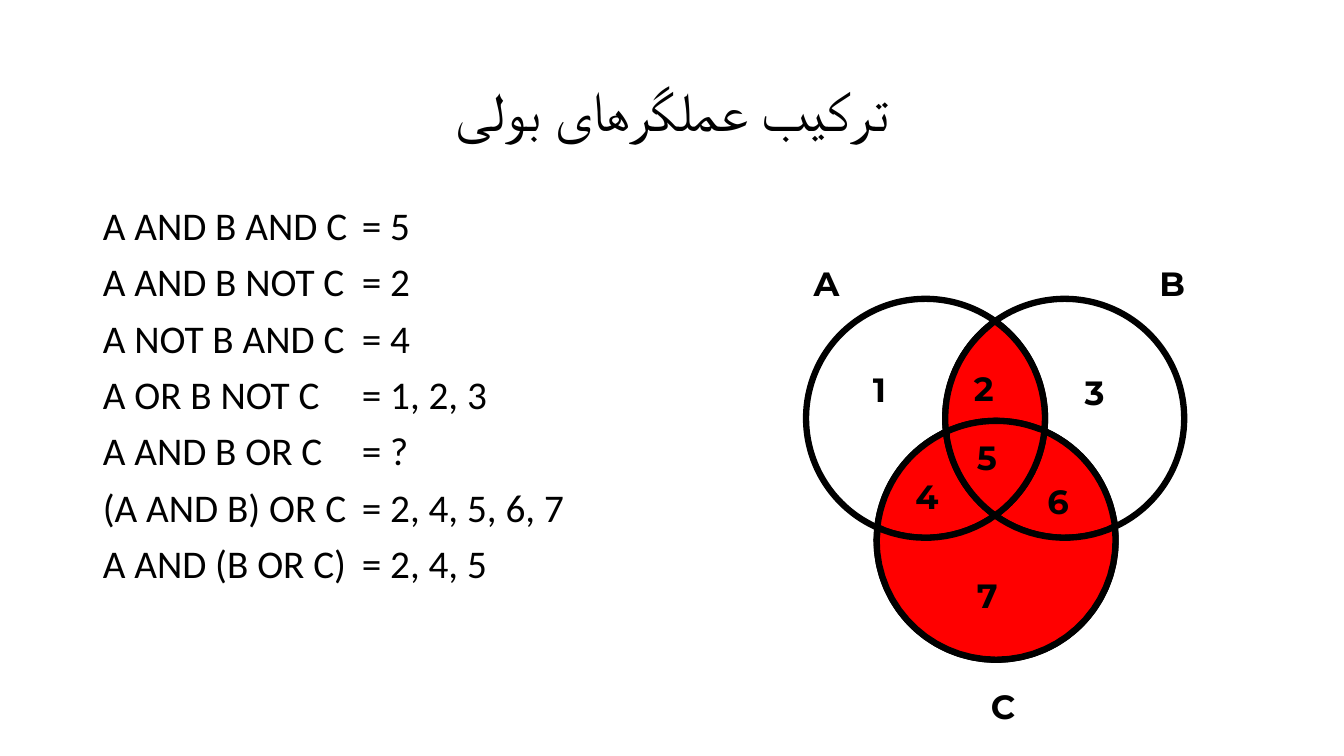
"""Build a slide on combining Boolean operators with a three-set Venn diagram."""
from math import atan2, cos, pi, remainder, sin

from lxml import etree
from pptx import Presentation
from pptx.dml.color import RGBColor
from pptx.enum.shapes import MSO_SHAPE
from pptx.enum.text import MSO_ANCHOR, MSO_AUTO_SIZE, PP_ALIGN
from pptx.oxml.ns import qn
from pptx.util import Inches, Pt


def color(value):
    return RGBColor.from_string(value)


def add_run(p, text, size, font, bold=False):
    r = p.add_run()
    r.text = text
    r.font.size = Pt(size)
    r.font.name = font
    r.font.bold = bold
    r.font.color.rgb = color("000000")


prs = Presentation()
prs.slide_width, prs.slide_height = Inches(13.33), Inches(7.5)
s = prs.slides.add_slide(prs.slide_layouts[1])

title, body = s.placeholders
title.left, title.top = Inches(0.92), Inches(0.4)
title.width, title.height = Inches(11.5), Inches(1.45)
tf = title.text_frame
tf.auto_size = MSO_AUTO_SIZE.NONE
tf.vertical_anchor = MSO_ANCHOR.MIDDLE
p = tf.paragraphs[0]
p.alignment = PP_ALIGN.CENTER
p.line_spacing = 0.9
p._p.get_or_add_pPr().set("rtl", "1")
add_run(p, "ترکیب عملگرهای بولی", 40, "Calibri")

RULES = [
    ("A AND B AND C", "= 5"),
    ("A AND B NOT C", "= 2"),
    ("A NOT B AND C", "= 4"),
    ("A OR B NOT C", "= 1, 2, 3"),
    ("A AND B OR C", "= ?"),
    ("(A AND B) OR C", "= 2, 4, 5, 6, 7"),
    ("A AND (B OR C)", "= 2, 4, 5"),
]
answers = s.shapes.add_textbox(0, 0, 0, 0)
for sp, x, lines in zip((body, answers), (0.92, 3.49), zip(*RULES)):
    sp.left, sp.top = Inches(x), Inches(2)
    sp.width, sp.height = Inches(2.69), Inches(4.76)
    tf = sp.text_frame
    tf.word_wrap = True
    tf.auto_size = MSO_AUTO_SIZE.NONE
    for i, line in enumerate(lines):
        p = tf.add_paragraph() if i else tf.paragraphs[0]
        p.line_spacing = 0.9
        p.space_before = Pt(10)
        pPr = p._p.get_or_add_pPr()
        pPr.set("marL", "0")
        pPr.set("indent", "0")
        etree.SubElement(pPr, qn("a:buNone"))
        add_run(p, line, 28, "Calibri")

RADIUS = 1.185
CENTERS = {"A": (9.18, 4.15), "B": (10.56, 4.15), "C": (9.88, 5.36)}
outlines = []
for cx, cy in CENTERS.values():
    sp = s.shapes.add_shape(
        MSO_SHAPE.OVAL, Inches(cx - RADIUS), Inches(cy - RADIUS),
        Inches(2 * RADIUS), Inches(2 * RADIUS))
    sp.fill.background()
    outlines.append(sp)

POINTS = {
    "top": (9.87, 3.18), "middle": (9.87, 5.11),
    "upper left": (9.39, 4.28), "upper right": (10.36, 4.27),
    "far left": (8.71, 5.23), "far right": (11.06, 5.22),
    "bottom": (9.88, 6.54),
}
REGIONS = [
    [("top", "A"), ("upper right", "C"), ("upper left", "B")],
    [("upper right", "C"), ("far right", "B"), ("middle", "A")],
    [("upper left", "B"), ("middle", "A"), ("far left", "C")],
    [("upper left", "C"), ("upper right", "A"), ("middle", "B")],
    [("middle", "B"), ("far right", "C"), ("bottom", "C"), ("far left", "A")],
]
STEPS = 16
for region in REGIONS:
    outline = []
    for (start, circle), (end, _) in zip(region, region[1:] + region[:1]):
        cx, cy = CENTERS[circle]
        a, b = [atan2(POINTS[n][1] - cy, POINTS[n][0] - cx) for n in (start, end)]
        sweep = remainder(b - a, 2 * pi)
        for i in range(STEPS):
            t = a + sweep * i / STEPS
            outline.append((Inches(cx + RADIUS * cos(t)), Inches(cy + RADIUS * sin(t))))
    builder = s.shapes.build_freeform(*outline[0])
    builder.add_line_segments(outline[1:], close=True)
    sp = builder.convert_to_shape()
    sp.fill.solid()
    sp.fill.fore_color.rgb = color("FF0000")
    outlines.append(sp)

for sp in outlines:
    sp.shadow.inherit = False
    sp.line.color.rgb = color("000000")
    sp.line.width = Pt(4.5)

LABELS = [
    ("A", 7.97, 2.56), ("B", 11.4, 2.56), ("C", 9.73, 6.76),
    ("1", 8.56, 3.61), ("2", 9.56, 3.6), ("3", 10.66, 3.64),
    ("4", 8.98, 4.67), ("5", 9.59, 4.29), ("6", 10.29, 4.72),
    ("7", 9.59, 5.65),
]
for text, x, y in LABELS:
    sp = s.shapes.add_textbox(Inches(x), Inches(y), Inches(0.58), Inches(0.5))
    tf = sp.text_frame
    tf.word_wrap = True
    tf.auto_size = MSO_AUTO_SIZE.SHAPE_TO_FIT_TEXT
    add_run(tf.paragraphs[0], text, 24, "Montserrat", True)

prs.save("out.pptx")
